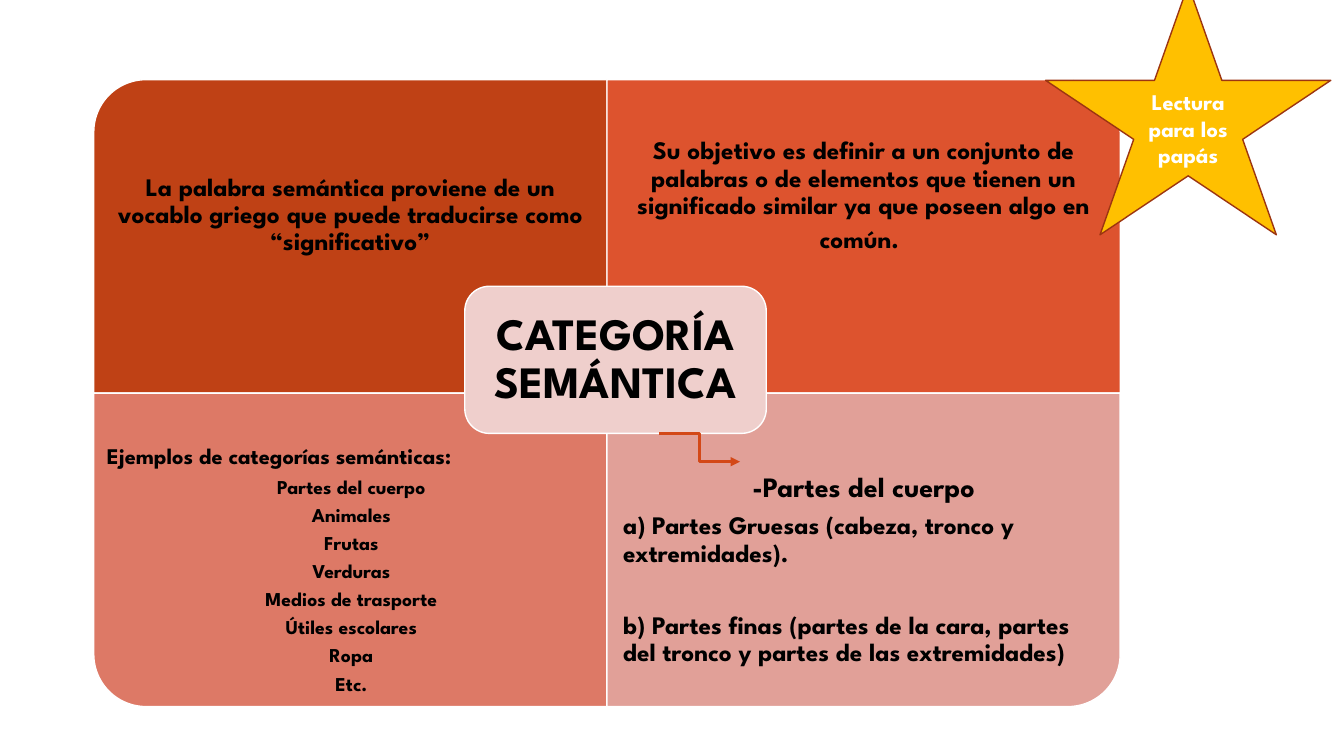
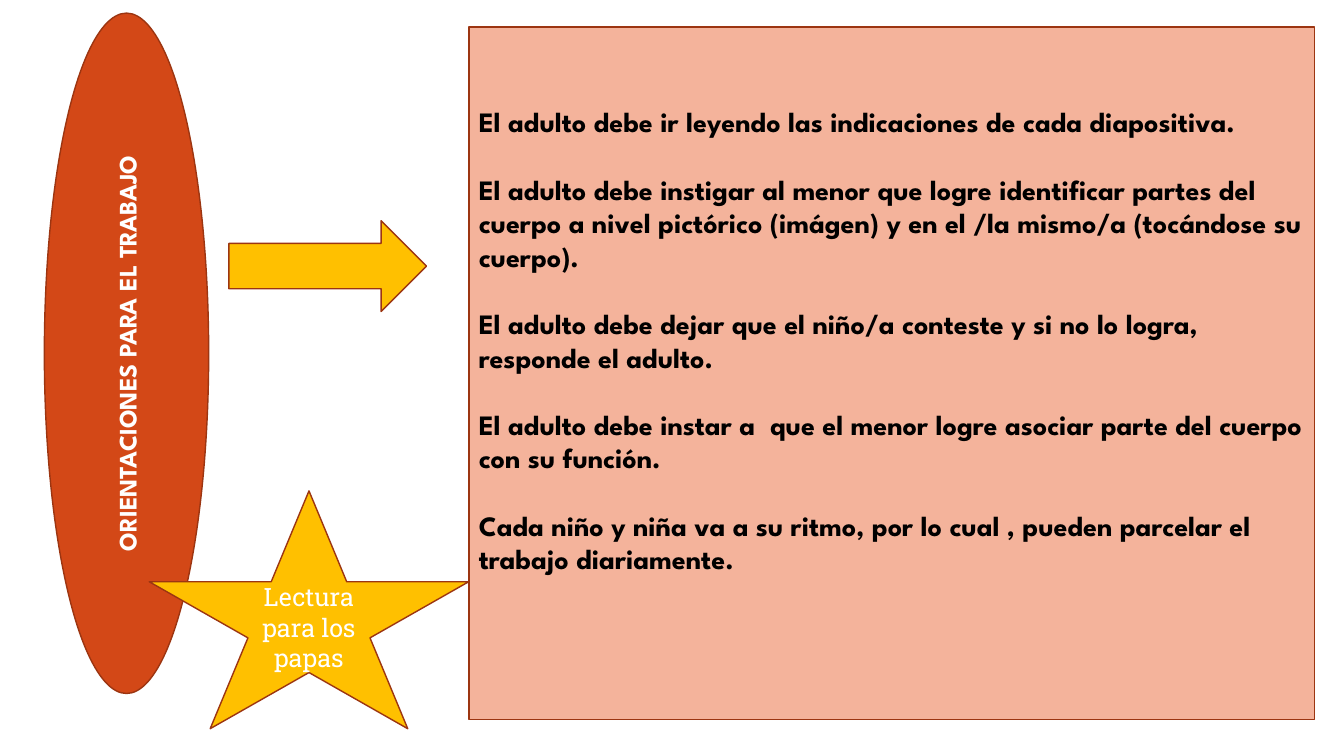
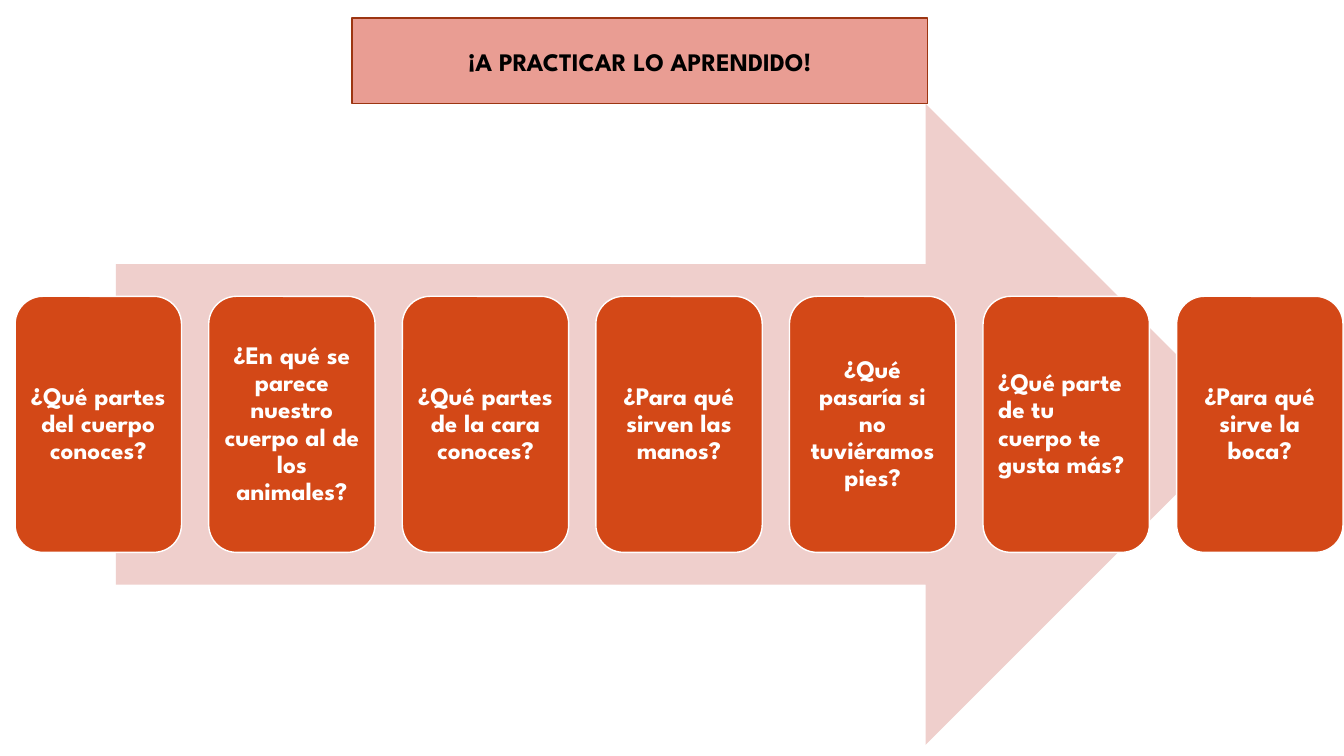
from dataclasses import dataclass
from typing import NamedTuple

from lxml import etree
from pptx import Presentation
from pptx.dml.color import RGBColor
from pptx.enum import shapes as es, text as et
from pptx.oxml import ns
from pptx.util import Inches, Pt

BLACK = RGBColor(0x00, 0x00, 0x00)
WHITE = RGBColor(0xFF, 0xFF, 0xFF)
RUST = RGBColor(0xBF, 0x41, 0x15)
BRICK = RGBColor(0xDD, 0x53, 0x2E)
CORAL = RGBColor(0xDD, 0x79, 0x66)
ROSE = RGBColor(0xE1, 0xA0, 0x98)
BLUSH = RGBColor(0xEF, 0xCF, 0xCC)
SALMON = RGBColor(0xE9, 0x9D, 0x93)
PEACH = RGBColor(0xF4, 0xB3, 0x9B)
ORANGE = RGBColor(0xD3, 0x48, 0x17)
GOLD = RGBColor(0xFF, 0xC0, 0x00)
EDGE = RGBColor(0x9C, 0x35, 0x11)

SANS = "League Spartan"
SLAB = "Roboto Slab"
KIND = es.MSO_SHAPE
LEFT = et.PP_ALIGN.LEFT
MID = et.PP_ALIGN.CENTER


class Box(NamedTuple):
    x: float
    y: float
    w: float
    h: float


@dataclass(frozen=True)
class Para:
    text: str
    size: int = 18
    color: RGBColor = BLACK
    align: int = MID
    before: float = 0
    face: str = SANS
    bold: bool = True
    tight: bool = False


@dataclass(frozen=True)
class Panel:
    col: int
    row: int
    turn: int
    fill: RGBColor
    words: Box
    inset: float
    paras: list[Para]


def apply(item, form: dict) -> None:
    for key, value in form.items():
        setattr(item, key, value)


def write(shape, paras: list[Para], inset: float | None = None):
    frame = shape.text_frame
    apply(frame, {"word_wrap": True, "vertical_anchor": et.MSO_ANCHOR.MIDDLE})
    if inset is not None:
        sides = ("left", "right", "top", "bottom")
        apply(frame, {f"margin_{side}": Inches(inset) for side in sides})
    for i, para in enumerate(paras):
        line = frame.paragraphs[0] if i == 0 else frame.add_paragraph()
        line.alignment = para.align
        if para.before:
            line.space_before = Pt(para.before)
        if para.tight:
            apply(line, {"line_spacing": 0.9, "space_after": Pt(0.35 * para.size)})
        run = line.add_run()
        run.text = para.text
        apply(run.font, {"name": para.face, "size": Pt(para.size), "bold": para.bold})
        run.font.color.rgb = para.color
    return frame


def draw(slide, kind: int, box: Box, fill: RGBColor,
         edge: RGBColor | None = EDGE, turn: int = 0):
    x, y, w, h = box
    if turn % 180:
        x, y, w, h = x + (w - h) / 2, y + (h - w) / 2, h, w
    shape = slide.shapes.add_shape(kind, *map(Inches, (x, y, w, h)))
    shape.rotation = turn
    shape.shadow.inherit = False
    shape.fill.solid()
    shape.fill.fore_color.rgb = fill
    if edge is None:
        shape.line.fill.background()
    else:
        shape.line.color.rgb = edge
        shape.line.width = Pt(1)
    return shape


def star(slide, box: Box, para: Para) -> None:
    write(draw(slide, KIND.STAR_5_POINT, box, GOLD), [para])


def elbow(slide, start: tuple, end: tuple) -> None:
    link = slide.shapes.add_connector(
        es.MSO_CONNECTOR.ELBOW, *map(Inches, (*start, *end)))
    link.line.color.rgb = ORANGE
    link.line.width = Pt(2.25)
    tip = etree.SubElement(link.line._get_or_add_ln(), ns.qn("a:tailEnd"))
    tip.set("type", "triangle")
    etree.SubElement(link._element.spPr, ns.qn("a:effectLst"))


TOPICS = ["Partes del cuerpo", "Animales", "Frutas", "Verduras",
          "Medios de trasporte", "Útiles escolares", "Ropa", "Etc."]

PANELS = [
    Panel(0, 0, 270, RUST, Box(0.93, 0.97, 5.09, 2.33), 0.14, [
        Para("La palabra semántica proviene de un vocablo griego que puede "
             "traducirse como “significativo”", tight=True)]),
    Panel(1, 0, 0, BRICK, Box(6.02, 0.79, 5.09, 2.33), 0.14, [
        Para("Su objetivo es definir a un conjunto de palabras o de elementos que "
             "tienen un significado similar ya que poseen algo en común.",
             tight=True)]),
    Panel(0, 1, 180, CORAL, Box(0.94, 4.26, 5.09, 2.8), 0.12, [
        Para("Ejemplos de categorías semánticas:", 16, align=LEFT, tight=True),
        *(Para(topic, 14, tight=True) for topic in TOPICS)]),
    Panel(1, 1, 90, ROSE, Box(6.02, 4.49, 5.09, 2.33), 0.16, [
        Para("-Partes del cuerpo", 20, tight=True),
        Para("a) Partes Gruesas (cabeza, tronco y extremidades).",
             align=LEFT, tight=True),
        Para("b) Partes finas (partes de la cara, partes del tronco y partes de "
             "las extremidades)", align=LEFT, before=25.7, tight=True)]),
]

ADVICE = [
    "El adulto debe ir leyendo las indicaciones de cada diapositiva.",
    "El adulto debe instigar al menor que logre identificar partes del cuerpo a "
    "nivel pictórico (imágen) y en el /la mismo/a (tocándose su cuerpo).",
    "El adulto debe dejar que el niño/a conteste y si no lo logra, responde el adulto.",
    "El adulto debe instar a  que el menor logre asociar parte del cuerpo con su función.",
    "Cada niño y niña va a su ritmo, por lo cual , pueden parcelar el trabajo diariamente.",
]

ASKS = [
    ("¿Qué partes del cuerpo conoces?", MID),
    ("¿En qué se parece nuestro cuerpo al de los animales?", MID),
    ("¿Qué partes de la cara conoces?", MID),
    ("¿Para qué sirven las manos?", MID),
    ("¿Qué pasaría si no tuviéramos pies?", MID),
    ("¿Qué parte de tu cuerpo te gusta más?", LEFT),
    ("¿Para qué sirve la boca?", MID),
]


def topic_slide(slide) -> None:
    wide, high = 5.09, 3.11
    for panel in PANELS:
        box = Box(0.93 + panel.col * wide, 0.79 + panel.row * high, wide, high)
        draw(slide, KIND.ROUND_1_RECTANGLE, box, panel.fill, WHITE, panel.turn)
        label = slide.shapes.add_textbox(*map(Inches, panel.words))
        frame = write(label, panel.paras, panel.inset)
        if panel.fill == BRICK:
            space = frame.paragraphs[0].add_run()
            space.text = " "
            apply(space.font, {"name": SLAB, "size": Pt(24)})
    hub = draw(slide, KIND.ROUNDED_RECTANGLE, Box(4.61, 2.84, 2.99, 1.46), BLUSH, WHITE)
    write(hub, [Para("CATEGORÍA SEMÁNTICA", 32, tight=True)], 0.13)
    star(slide, Box(10.37, -0.15, 2.83, 2.48), Para("Lectura para los papás", 16, WHITE))
    elbow(slide, (6.54, 4.3), (7.34, 4.58))


def guide_slide(slide) -> None:
    title = draw(slide, KIND.OVAL, Box(0.44, 0.13, 1.63, 6.75), ORANGE, turn=270)
    write(title, [Para("ORIENTACIONES PARA EL TRABAJO", color=WHITE)])
    draw(slide, KIND.RIGHT_ARROW, Box(2.27, 2.19, 1.96, 0.9), GOLD)
    card = draw(slide, KIND.RECTANGLE, Box(4.65, 0.27, 8.39, 6.87), PEACH)
    frame = write(card, [Para(tip, 20, align=LEFT, before=24 if i else 0)
                         for i, tip in enumerate(ADVICE)])
    frame.margin_bottom = Inches(0.71)
    star(slide, Box(1.48, 4.87, 3.17, 2.36),
         Para("Lectura para los papas", color=WHITE, face=SLAB, bold=False))


def drill_slide(slide) -> None:
    title = draw(slide, KIND.RECTANGLE, Box(3.49, 0.18, 5.71, 0.85), SALMON)
    write(title, [Para("¡A PRACTICAR LO APRENDIDO!")])
    draw(slide, KIND.RIGHT_ARROW, Box(1.15, 1.03, 11.21, 6.36), BLUSH, None)
    for i, (ask, align) in enumerate(ASKS):
        box = Box(0.15 + i * 1.92, 2.94, 1.65, 2.54)
        card = draw(slide, KIND.ROUNDED_RECTANGLE, box, ORANGE, WHITE)
        write(card, [Para(ask, color=WHITE, align=align, tight=True)], 0.07)


def main() -> None:
    deck = Presentation()
    apply(deck, {"slide_width": Inches(13.33), "slide_height": Inches(7.5)})
    for build in (topic_slide, guide_slide, drill_slide):
        build(deck.slides.add_slide(deck.slide_layouts[6]))
    deck.save("out.pptx")


if __name__ == "__main__":
    main()
